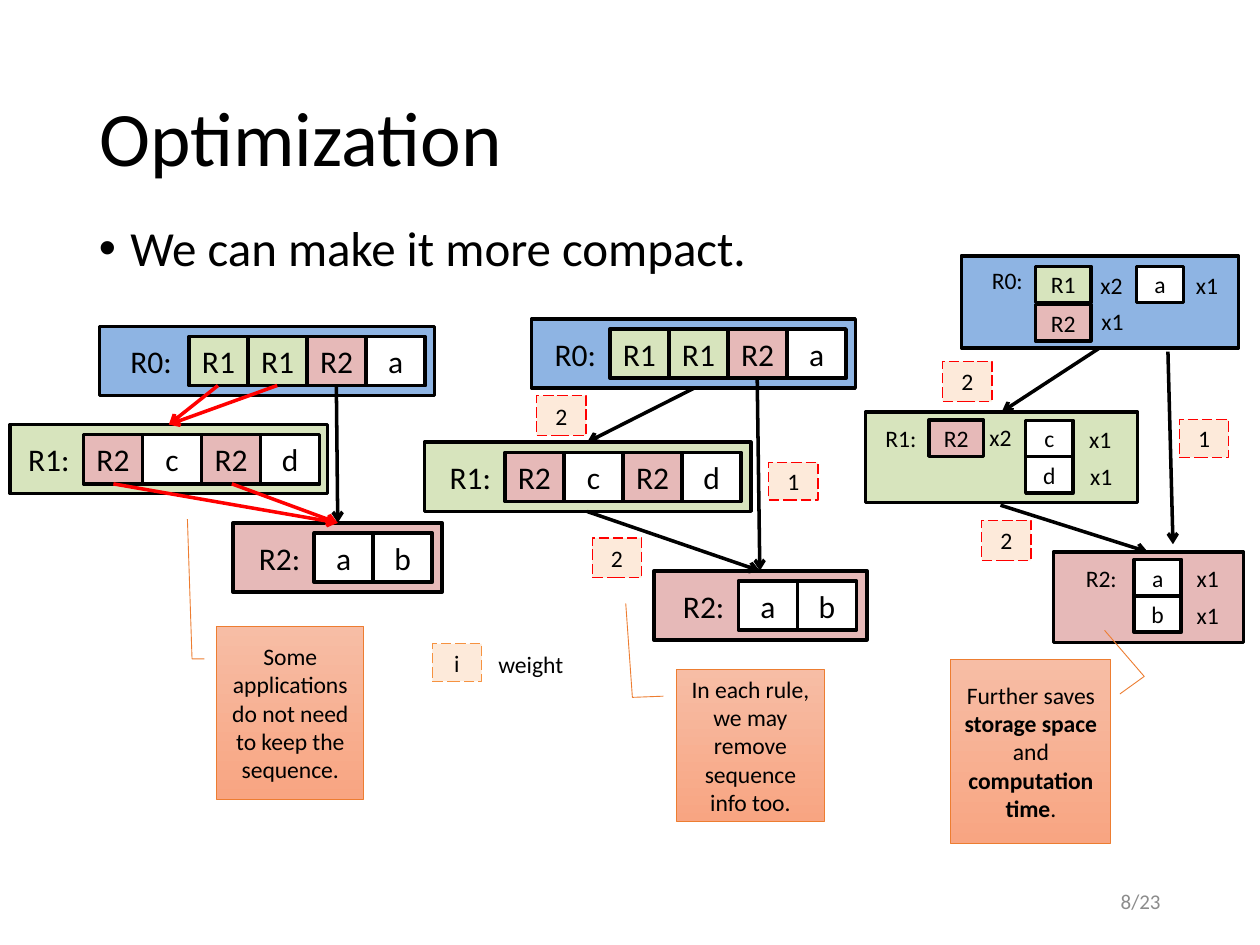
"""Build the Optimization slide: three versions of a rule graph, each more compact."""
from dataclasses import dataclass

from lxml import etree
from pptx import Presentation
from pptx.dml.color import RGBColor
from pptx.enum import dml, shapes, text
from pptx.oxml import ns
from pptx.util import Pt


@dataclass(frozen=True)
class Theme:
    font: str = "Calibri"
    black: str = "000000"
    white: str = "FFFFFF"
    blue: str = "8EB4E3"
    green: str = "D7E4BD"
    pink: str = "E6B9B8"
    red: str = "FF0000"
    cream: str = "FDEADA"
    amber: str = "F69240"
    orange: str = "ED7D31"
    gradient: tuple = ("F7BDA5", "F8A582")
    grey: str = "8C8C8C"
    title: float = 44
    body: float = 28
    large: float = 18
    small: float = 13.5
    footer: float = 12


T = Theme()
RULES = {"R0": T.blue, "R1": T.green, "R2": T.pink}
CELL_W, CELL_H, BAR_H, BAR_PAD = 33.75, 28.1, 39.5, 5.8
CENTER = text.PP_ALIGN.CENTER


def rgb(value):
    return RGBColor.from_string(value)


def format_text(tf, size, color=T.black, align=CENTER, anchor=text.MSO_ANCHOR.MIDDLE, margin=None):
    tf.word_wrap = True
    tf.vertical_anchor = anchor
    if margin is not None:
        tf.margin_left = tf.margin_right = Pt(margin)
        tf.margin_top = tf.margin_bottom = Pt(margin / 2)
    for p in tf.paragraphs:
        p.alignment = align
        for r in p.runs:
            r.font.name, r.font.size = T.font, Pt(size)
            r.font.color.rgb = rgb(color)


def add_box(s, x, y, w, h, fill, label="", size=T.small, line=None, width=2, align=CENTER, margin=0):
    sp = s.shapes.add_shape(shapes.MSO_SHAPE.RECTANGLE, Pt(x), Pt(y), Pt(w), Pt(h))
    sp.shadow.inherit = False
    sp.fill.solid()
    sp.fill.fore_color.rgb = rgb(fill)
    if line:
        sp.line.color.rgb = rgb(line)
        sp.line.width = Pt(width)
    else:
        sp.line.fill.background()
    sp.text_frame.text = label
    format_text(sp.text_frame, size, align=align, margin=margin)
    return sp


def add_cell(s, label, x, y, w, h, size):
    add_box(s, x, y, w, h, RULES.get(label, T.white), label, size, T.black)


def add_rule(s, name, x, y, w, cells_x, cells, label_w=39.5):
    fill, row = RULES[name], y + BAR_PAD
    add_box(s, x, y, w, BAR_H, fill, line=T.black)
    add_box(s, cells_x - label_w, row, label_w, CELL_H, fill, f"{name}:", T.large)
    for i, label in enumerate(cells):
        add_cell(s, label, cells_x + i * CELL_W, row, CELL_W, CELL_H, T.large)


def add_compact_rule(s, name, frame, label_frame, counts, cells):
    fill = RULES[name]
    add_box(s, *frame, fill, line=T.black)
    add_box(s, *label_frame, fill, f"{name}:")
    for label, x, y in counts:
        add_box(s, x, y, 27.5, 20.8, fill, label)
    for label, x, y, w in cells:
        add_cell(s, label, x, y, w, 20.8, T.small)


def add_arrow(s, start, end, color=T.black):
    c = s.shapes.add_connector(shapes.MSO_CONNECTOR.STRAIGHT, *map(Pt, start + end))
    c.line.color.rgb = rgb(color)
    c.line.width = Pt(2)
    etree.SubElement(c.line._get_or_add_ln(), ns.qn("a:tailEnd"), type="arrow")
    etree.SubElement(c._element.spPr, ns.qn("a:effectLst"))


def add_weight(s, label, x, y, h=22.8, line=T.red):
    sp = add_box(s, x, y, 28.2, h, T.cream, label, line=line, width=0.75)
    sp.line.dash_style = dml.MSO_LINE.LONG_DASH


def add_callout(s, x, y, w, h, adjustments, runs):
    sp = s.shapes.add_shape(shapes.MSO_SHAPE.LINE_CALLOUT_2, Pt(x), Pt(y), Pt(w), Pt(h))
    sp.shadow.inherit = False
    for i, value in enumerate(adjustments):
        sp.adjustments[i] = value
    sp.fill.gradient()
    sp.fill.gradient_angle = 270
    for stop, color in zip(sp.fill.gradient_stops, T.gradient):
        stop.color.rgb = rgb(color)
    sp.line.color.rgb = rgb(T.orange)
    sp.line.width = Pt(0.5)
    p = sp.text_frame.paragraphs[0]
    for label, bold in runs:
        r = p.add_run()
        r.text, r.font.bold = label, bold
    format_text(sp.text_frame, T.small, margin=5.4)


def add_text(s, x, y, w, h, label, size, color, align, anchor):
    tf = s.shapes.add_textbox(Pt(x), Pt(y), Pt(w), Pt(h)).text_frame
    tf.text = label
    format_text(tf, size, color, align, anchor)
    return tf.paragraphs[0]


def add_heading(s):
    sp = s.shapes.title
    sp.left, sp.top, sp.width, sp.height = map(Pt, (49.5, 28.8, 621, 104.4))
    sp.text_frame.text = "Optimization"
    format_text(sp.text_frame, T.title, align=text.PP_ALIGN.LEFT)
    sp.text_frame.paragraphs[0].line_spacing = 0.9
    p = add_text(s, 49.5, 124.6, 621, 342.7, "We can make it more compact.", T.body,
                 T.black, text.PP_ALIGN.LEFT, text.MSO_ANCHOR.TOP)
    p.line_spacing, p.space_before = 0.9, Pt(10)
    pPr = p._p.get_or_add_pPr()
    pPr.set("marL", str(Pt(18)))
    pPr.set("indent", str(Pt(-18)))
    etree.SubElement(pPr, ns.qn("a:buFont"), typeface="Arial")
    etree.SubElement(pPr, ns.qn("a:buChar"), char="•")


def add_sequence_graph(s):
    add_rule(s, "R2", 133.2, 298.8, 119.5, 179.5, "ab")
    add_rule(s, "R1", 5.8, 242.6, 181.4, 47.7, ("R2", "c", "R2", "d"))
    add_rule(s, "R0", 56.9, 186.5, 191.5, 108, ("R1", "R1", "R2", "a"), label_w=43.2)
    to_r1, to_r2 = (96.5, 242.6), (193, 298.8)
    for x in (124.6, 158.4):
        add_arrow(s, (x, 220.3), to_r1, T.red)
    add_arrow(s, (192.2, 220.3), to_r2)
    for x in (64.8, 132.5):
        add_arrow(s, (x, 276.5), to_r2, T.red)
    add_callout(s, 123.8, 358, 84.2, 98.6, (0.188, -0.083, 0.188, -0.167, -0.622, -0.198),
                [("Some applications do not need to keep the sequence.", False)])


def add_weighted_graph(s):
    add_rule(s, "R2", 373.7, 326.2, 121.7, 421.9, "ab")
    add_rule(s, "R1", 242.6, 252.7, 186.5, 288.5, ("R2", "c", "R2", "d"))
    add_rule(s, "R0", 303.8, 182.2, 185, 348.5, ("R1", "R1", "R2", "a"))
    add_arrow(s, (396.7, 221.8), (335.5, 252.7))
    add_arrow(s, (432.7, 216), (434.2, 326.2))
    add_arrow(s, (335.5, 292.3), (434.2, 326.2))
    add_weight(s, "i", 247, 367.9, 21.4, T.amber)
    add_box(s, 279.4, 369.4, 70.6, 20.2, T.white, "weight", align=text.PP_ALIGN.LEFT, margin=5.4)
    add_weight(s, "1", 439.2, 264.2, 21.6)
    add_weight(s, "2", 306.7, 226.1)
    add_weight(s, "2", 338.4, 307.4)
    add_callout(s, 386.6, 382.5, 84.4, 87, (0.176, -0.089, 0.184, -0.299, -0.434, -0.344),
                [("In each rule, we may remove sequence info too.", False)])


def add_compact_graph(s):
    add_arrow(s, (571.7, 288.7), (655.9, 315.4))
    add_arrow(s, (628.6, 198.7), (572.4, 235.4))
    add_arrow(s, (667.4, 200.9), (670.3, 311))
    add_compact_rule(s, "R0", (549.4, 146.2, 158.4, 52.6), (555.1, 147.6, 41, 25.2),
                     [("x2", 621.4, 152.3), ("x1", 622, 173), ("x1", 676, 152.3)],
                     [("R1", 591.8, 152.2, 31.7), ("R2", 591.8, 174, 31.7), ("a", 649.4, 152.2, 27)])
    add_compact_rule(s, "R2", (601.9, 315.4, 108.7, 51.8), (607, 319.7, 44.6, 20.8),
                     [("x1", 676.4, 319.7), ("x1", 676.4, 340.9)],
                     [("a", 648, 319.7, 27), ("b", 648, 340.5, 27)])
    add_compact_rule(s, "R1", (494.6, 235.4, 155.5, 51.8), (496.8, 240, 36, 20.8),
                     [("x2", 558, 239.3), ("x1", 615, 240.7), ("x1", 615.6, 261.8)],
                     [("c", 586.1, 240.2, 27), ("d", 586.1, 261, 27), ("R2", 530.8, 240, 31.2)])
    add_weight(s, "2", 538.6, 206.6)
    add_weight(s, "1", 673.9, 239.8, 21.6)
    add_weight(s, "2", 560.9, 297.4)
    add_callout(s, 543.4, 376.8, 91.4, 105.1, (0.188, 1.057, 0.093, 1.209, -0.158, 0.961),
                [("Further saves ", False), ("storage space ", True), ("and ", False),
                 ("computation time", True), (".", False)])


def main():
    prs = Presentation()
    prs.slide_width, prs.slide_height = Pt(720), Pt(540)
    s = prs.slides.add_slide(prs.slide_layouts[5])
    add_heading(s)
    add_sequence_graph(s)
    add_weighted_graph(s)
    add_compact_graph(s)
    add_text(s, 508.3, 500.4, 162, 28.8, "8/23", T.footer, T.grey,
             text.PP_ALIGN.RIGHT, text.MSO_ANCHOR.MIDDLE)
    prs.save("out.pptx")


if __name__ == "__main__":
    main()
